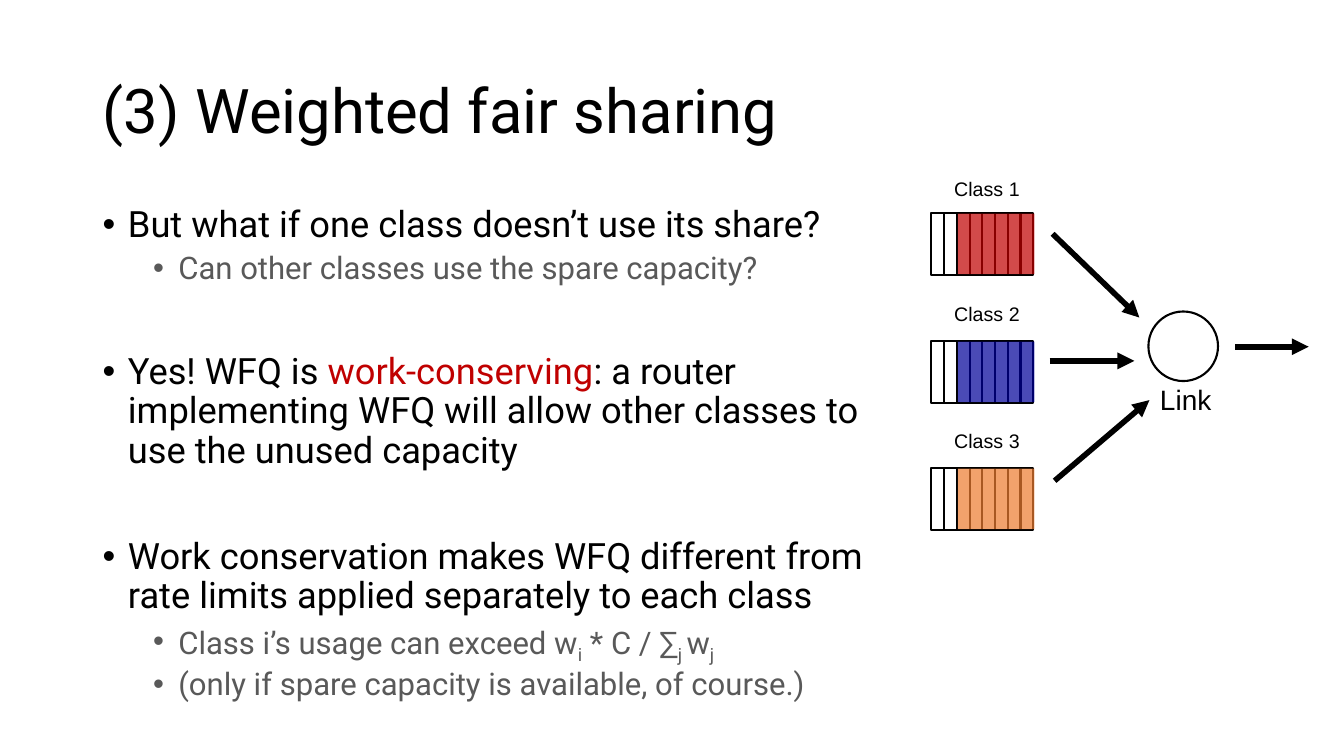
from lxml import etree
from pptx import Presentation
from pptx.dml.color import RGBColor
from pptx.enum import shapes, text
from pptx.oxml.ns import qn
from pptx.util import Inches, Pt

BLACK = RGBColor(0x00, 0x00, 0x00)
GRAY = RGBColor(0x59, 0x59, 0x59)
RED = RGBColor(0xC0, 0x00, 0x00)
BLUE = RGBColor(0x00, 0x00, 0x99)
ORANGE = RGBColor(0xED, 0x7D, 0x31)

BODY_FONT = "Roboto"
LABEL_FONT = "Arial"
SECTION_GAP = 48
SUBSCRIPT = "-25000"

QUEUE_LEFT, QUEUE_WIDTH, QUEUE_HEIGHT = 9.23, 1.02, 0.62
SLOT_WIDTH = 0.126
SEPARATORS = 7

QUEUES = [
    ("Class 1", 1.71, 2.11, RED),
    ("Class 2", 2.95, 3.38, BLUE),
    ("Class 3", 4.21, 4.64, ORANGE),
]

ARROWS = [
    (10.44, 2.32, 11.3, 3.15),
    (10.46, 4.77, 11.4, 3.97),
    (10.41, 3.58, 11.25, 3.58),
    (12.25, 3.44, 12.98, 3.44),
]

BULLETS = [
    (0, 10, [("But what if one class doesn’t use its share?", None)]),
    (1, 5, [("Can other classes use the spare capacity?", None)]),
    (0, SECTION_GAP, [
        ("Yes! WFQ is ", None),
        ("work-conserving", "accent"),
        (": a router implementing WFQ will allow other classes to use the unused capacity", None),
    ]),
    (0, SECTION_GAP, [
        ("Work conservation makes WFQ different from rate limits applied separately to each class", None),
    ]),
    (1, 5, [
        ("Class i’s usage can exceed w", None),
        ("i", "subscript"),
        (" * C / ∑", None),
        ("j ", "subscript"),
        ("w", None),
        ("j", "subscript"),
    ]),
    (1, 5, [("(only if spare capacity is available, of course.)", None)]),
]


def set_font(font, name, size, color):
    font.name = name
    font.size = Pt(size)
    font.color.rgb = color


def add_title(slide, words):
    title = slide.shapes.title
    title.left, title.top = Inches(0.92), Inches(0.4)
    title.width, title.height = Inches(11.5), Inches(1.45)
    frame = title.text_frame
    frame.text = words
    frame.vertical_anchor = text.MSO_ANCHOR.MIDDLE
    paragraph = frame.paragraphs[0]
    paragraph.alignment = text.PP_ALIGN.LEFT
    paragraph.line_spacing = 0.9
    set_font(paragraph.font, BODY_FONT, 44, BLACK)


def set_bullet(paragraph, level):
    properties = paragraph._p.get_or_add_pPr()
    properties.set("marL", str(Inches(0.25 + 0.5 * level)))
    properties.set("indent", str(Inches(-0.25)))
    bullet_font = etree.SubElement(properties, qn("a:buFont"))
    bullet_font.set("typeface", LABEL_FONT)
    etree.SubElement(properties, qn("a:buChar")).set("char", "•")


def add_bullets(slide, bullets):
    box = slide.shapes.add_textbox(Inches(0.92), Inches(2), Inches(7.95), Inches(5.1))
    frame = box.text_frame
    frame.word_wrap = True
    for index, (level, space_before, pieces) in enumerate(bullets):
        paragraph = frame.add_paragraph() if index else frame.paragraphs[0]
        paragraph.level = level
        paragraph.line_spacing = 0.9
        paragraph.space_before = Pt(space_before)
        set_bullet(paragraph, level)
        size, color = (22.2, GRAY) if level else (25.9, BLACK)
        for words, style in pieces:
            run = paragraph.add_run()
            run.text = words
            set_font(run.font, BODY_FONT, size, RED if style == "accent" else color)
            if style == "subscript":
                run._r.get_or_add_rPr().set("baseline", SUBSCRIPT)


def add_label(slide, words, left, top, width, height, size):
    box = slide.shapes.add_textbox(Inches(left), Inches(top), Inches(width), Inches(height))
    frame = box.text_frame
    frame.word_wrap = False
    frame.auto_size = text.MSO_AUTO_SIZE.SHAPE_TO_FIT_TEXT
    frame.text = words
    paragraph = frame.paragraphs[0]
    paragraph.alignment = text.PP_ALIGN.CENTER
    set_font(paragraph.font, LABEL_FONT, size, BLACK)


def add_outline(parent, kind, left, top, width, height):
    shape = parent.shapes.add_shape(kind, Inches(left), Inches(top), Inches(width), Inches(height))
    shape.shadow.inherit = False
    shape.fill.background()
    shape.line.color.rgb = BLACK
    shape.line.width = Pt(1.5)
    return shape


def add_line(parent, x1, y1, x2, y2, width):
    line = parent.shapes.add_connector(
        shapes.MSO_CONNECTOR.STRAIGHT, Inches(x1), Inches(y1), Inches(x2), Inches(y2))
    line.line.color.rgb = BLACK
    line.line.width = Pt(width)
    etree.SubElement(line._element.spPr, qn("a:effectLst"))
    return line


def add_arrow(slide, x1, y1, x2, y2):
    arrow = add_line(slide, x1, y1, x2, y2, 4)
    head = etree.SubElement(arrow.line._get_or_add_ln(), qn("a:tailEnd"))
    head.set("type", "triangle")


def add_queue(slide, top, color):
    group = slide.shapes.add_group_shape()
    add_outline(group, shapes.MSO_SHAPE.RECTANGLE, QUEUE_LEFT, top, QUEUE_WIDTH, QUEUE_HEIGHT)
    for slot in range(1, SEPARATORS + 1):
        x = QUEUE_LEFT + 0.01 + slot * SLOT_WIDTH
        add_line(group, x, top, x, top + QUEUE_HEIGHT, 1.5)
    packets = add_outline(group, shapes.MSO_SHAPE.RECTANGLE, 9.5, top + 0.01, 0.76, 0.6)
    packets.line.fill.background()
    packets.fill.solid()
    packets.fill.fore_color.rgb = color
    fill_color = packets._element.spPr.find(qn("a:solidFill"))[0]
    etree.SubElement(fill_color, qn("a:alpha")).set("val", "71000")


def main():
    presentation = Presentation()
    presentation.slide_width = Inches(13.33)
    presentation.slide_height = Inches(7.5)
    slide = presentation.slides.add_slide(presentation.slide_layouts[5])

    add_title(slide, "(3) Weighted fair sharing")
    add_bullets(slide, BULLETS)
    for name, label_top, queue_top, color in QUEUES:
        add_queue(slide, queue_top, color)
        add_label(slide, name, 9.36, label_top, 0.86, 0.34, 14)
    add_outline(slide, shapes.MSO_SHAPE.OVAL, 11.39, 3.09, 0.69, 0.69)
    add_label(slide, "Link", 11.4, 3.75, 0.72, 0.44, 20)
    for ends in ARROWS:
        add_arrow(slide, *ends)

    presentation.save("out.pptx")


if __name__ == "__main__":
    main()
